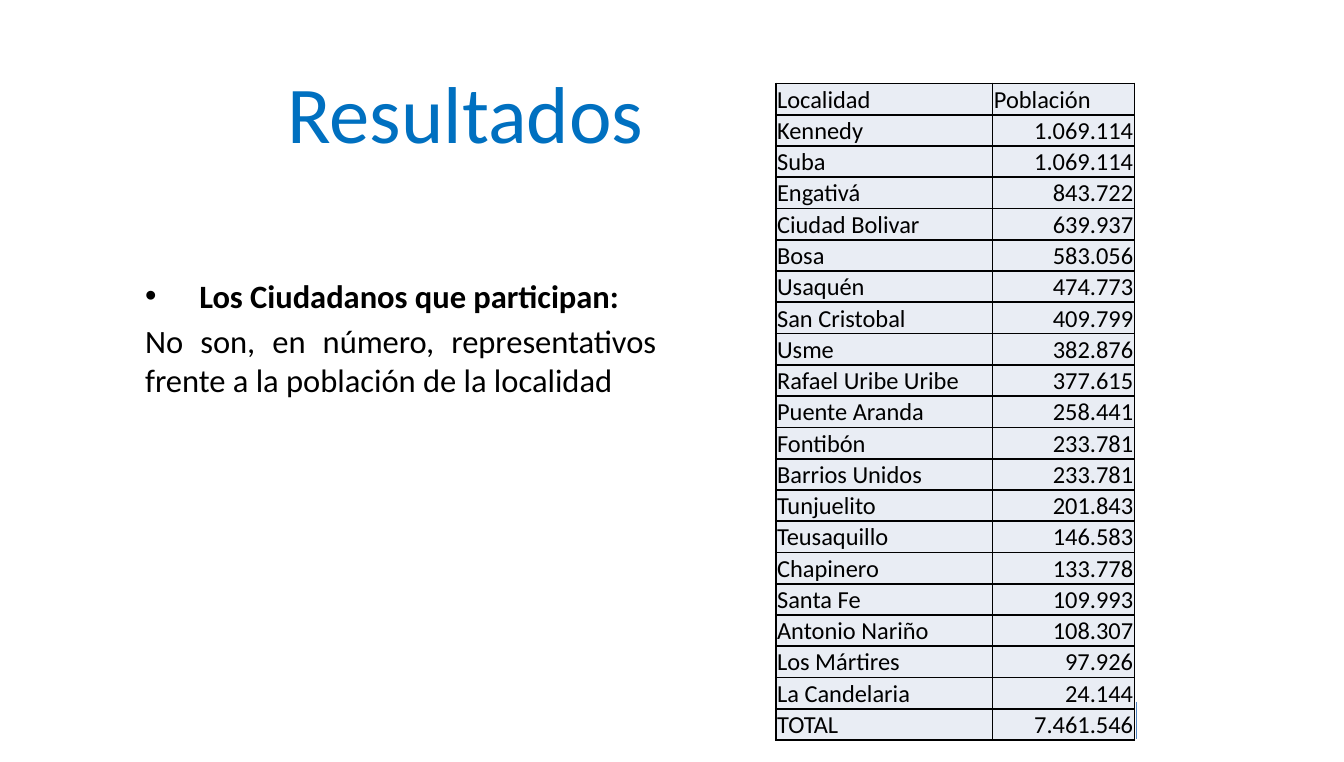
from lxml.etree import SubElement
from pptx import Presentation
from pptx.dml.color import RGBColor
from pptx.enum.shapes import MSO_CONNECTOR
from pptx.enum.text import MSO_ANCHOR, MSO_AUTO_SIZE, PP_ALIGN
from pptx.oxml.ns import qn
from pptx.util import Pt

COLORS = {"title": "0070C0", "text": "000000", "cell": "E9EDF4",
          "border": "000000", "mark": "4F81BD"}
POPULATION = [
    ("Localidad", "Población"),
    ("Kennedy", "1.069.114"),
    ("Suba", "1.069.114"),
    ("Engativá", "843.722"),
    ("Ciudad Bolivar", "639.937"),
    ("Bosa", "583.056"),
    ("Usaquén", "474.773"),
    ("San Cristobal", "409.799"),
    ("Usme", "382.876"),
    ("Rafael Uribe Uribe", "377.615"),
    ("Puente Aranda", "258.441"),
    ("Fontibón", "233.781"),
    ("Barrios Unidos", "233.781"),
    ("Tunjuelito", "201.843"),
    ("Teusaquillo", "146.583"),
    ("Chapinero", "133.778"),
    ("Santa Fe", "109.993"),
    ("Antonio Nariño", "108.307"),
    ("Los Mártires", "97.926"),
    ("La Candelaria", "24.144"),
    ("TOTAL", "7.461.546"),
]
COLUMN_WIDTHS = (106.5, 69.8)
ROW_HEIGHT = 15.3


def style_text(paragraph, size, color, align, bold=False):
    paragraph.alignment = align
    font = paragraph.font
    font.name, font.size, font.bold = "Calibri", Pt(size), bold
    font.color.rgb = RGBColor.from_string(COLORS[color])


def place(placeholder, left, top, width, height):
    """Move a placeholder and fix its text to the top without autofit."""
    placeholder.left, placeholder.top = Pt(left), Pt(top)
    placeholder.width, placeholder.height = Pt(width), Pt(height)
    frame = placeholder.text_frame
    frame.word_wrap = True
    frame.auto_size = MSO_AUTO_SIZE.NONE
    frame.vertical_anchor = MSO_ANCHOR.TOP
    return frame


prs = Presentation()
prs.slide_width, prs.slide_height = Pt(660), Pt(374.4)
slide = prs.slides.add_slide(prs.slide_layouts[1])

# Title
title = place(slide.shapes.title, 51, 27.4, 272.2, 29.5)
title.text = "Resultados"
style_text(title.paragraphs[0], 39.6, "title", PP_ALIGN.RIGHT)

# Finding about the citizens
finding = place(slide.placeholders[1], 64.1, 131.8, 265.7, 73.4)
finding.text = ("Los Ciudadanos que participan:\n"
                "No son, en número, representativos frente a la población de la localidad")
heading, statement = finding.paragraphs
for paragraph, indent, bullet in ((heading, 26.6, "•"), (statement, 0, None)):
    properties = paragraph._p.get_or_add_pPr()
    properties.set("marL", str(Pt(indent)))
    properties.set("indent", str(-Pt(indent)))
    if bullet:
        SubElement(properties, qn("a:buFont"), typeface="Arial")
        SubElement(properties, qn("a:buChar"), char=bullet)
    else:
        SubElement(properties, qn("a:buNone"))
    paragraph.space_before = Pt(0 if bullet else 3.2)
    style_text(paragraph, 16, "text", PP_ALIGN.JUSTIFY, bold=bool(bullet))

# Short mark beside the total
mark = slide.shapes.add_connector(MSO_CONNECTOR.STRAIGHT, Pt(558), Pt(344.9), Pt(558), Pt(362.9))
mark.line.color.rgb = RGBColor.from_string(COLORS["mark"])
mark.line.width = Pt(0.75)
SubElement(mark._element.spPr, qn("a:effectLst"))

# Population by locality
table = slide.shapes.add_table(len(POPULATION), len(COLUMN_WIDTHS), Pt(380.9), Pt(41),
                               Pt(sum(COLUMN_WIDTHS)), Pt(ROW_HEIGHT * len(POPULATION))).table
table.first_row = table.horz_banding = False
for column, width in zip(table.columns, COLUMN_WIDTHS):
    column.width = Pt(width)
for row_index, values in enumerate(POPULATION):
    table.rows[row_index].height = Pt(ROW_HEIGHT)
    for column_index, value in enumerate(values):
        cell = table.cell(row_index, column_index)
        cell.text = value
        cell.vertical_anchor = MSO_ANCHOR.BOTTOM
        cell.margin_left = cell.margin_right = cell.margin_top = Pt(0.72)
        cell.margin_bottom = Pt(0)
        for side in ("a:lnL", "a:lnR", "a:lnT", "a:lnB"):
            border = SubElement(cell._tc.get_or_add_tcPr(), qn(side), w=str(Pt(1)))
            border_fill = SubElement(border, qn("a:solidFill"))
            SubElement(border_fill, qn("a:srgbClr"), val=COLORS["border"])
        cell.fill.solid()
        cell.fill.fore_color.rgb = RGBColor.from_string(COLORS["cell"])
        is_number = row_index > 0 and column_index == 1
        style_text(cell.text_frame.paragraphs[0], 12, "text",
                   PP_ALIGN.RIGHT if is_number else PP_ALIGN.LEFT)

prs.save("out.pptx")
